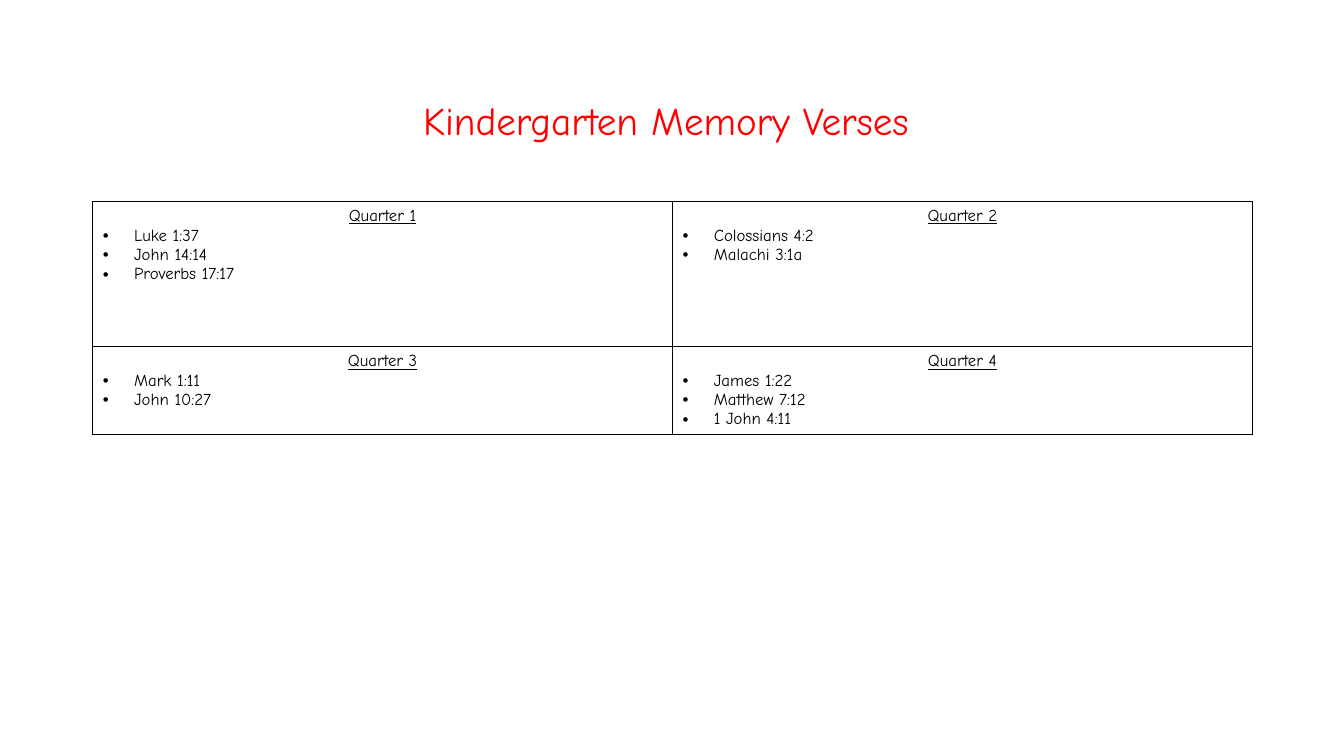
from lxml import etree
from pptx import Presentation
from pptx.dml.color import RGBColor
from pptx.enum.text import MSO_ANCHOR, PP_ALIGN
from pptx.oxml.ns import qn
from pptx.util import Inches, Pt

MIDDLE, CENTER, LEFT = MSO_ANCHOR.MIDDLE, PP_ALIGN.CENTER, PP_ALIGN.LEFT

# Content
TITLE = "Kindergarten Memory Verses "
QUARTERS = [
    [("Quarter 1", ["Luke 1:37", "John 14:14", "Proverbs 17:17"]),
     ("Quarter 2", ["Colossians 4:2", "Malachi 3:1a"])],
    [("Quarter 3", ["Mark 1:11", "John 10:27"]),
     ("Quarter 4", ["James 1:22", "Matthew 7:12", "1 John 4:11"])],
]

# Theme and grid, lengths in inches
THEME = {"font": "Comic Neue", "title": 28, "body": 12,
         "red": "FF0000", "ink": "000000", "line": 1}
WIDE, HIGH = 13.33, 7.5
SIDE, SPAN = 0.92, 11.5
ROWS = [1.44, 0.87]
INDENT = 0.31


def add_run(para, text, size, color, under=False):
    run = para.add_run()
    run.text = text
    font = run.font
    font.name, font.size = THEME["font"], Pt(THEME[size])
    font.color.rgb = RGBColor.from_string(THEME[color])
    font.underline = under


def add_bullet(para):
    props = para._p.get_or_add_pPr()
    props.set("marL", str(Inches(INDENT)))
    props.set("indent", str(-Inches(INDENT)))
    etree.SubElement(props, qn("a:buFont")).set("typeface", "Arial")
    etree.SubElement(props, qn("a:buChar")).set("char", "•")


def add_border(cell):
    props = cell._tc.get_or_add_tcPr()
    for side in ("lnL", "lnR", "lnT", "lnB"):
        line = etree.SubElement(props, qn("a:" + side))
        line.set("w", str(Pt(THEME["line"])))
        fill = etree.SubElement(line, qn("a:solidFill"))
        etree.SubElement(fill, qn("a:srgbClr")).set("val", THEME["ink"])


def fill_cell(cell, head, verses):
    add_border(cell)
    cell.fill.background()
    frame = cell.text_frame
    para = frame.paragraphs[0]
    para.alignment = CENTER
    add_run(para, head, "body", "ink", under=True)
    for verse in verses:
        para = frame.add_paragraph()
        para.alignment = LEFT
        add_bullet(para)
        add_run(para, verse, "body", "ink")


def main():
    deck = Presentation()
    deck.slide_width, deck.slide_height = Inches(WIDE), Inches(HIGH)
    slide = deck.slides.add_slide(deck.slide_layouts[5])

    # Title
    title = slide.shapes.title
    title.left, title.top = Inches(SIDE), Inches(0.53)
    title.width, title.height = Inches(SPAN), Inches(1.37)
    title.text_frame.vertical_anchor = MIDDLE
    para = title.text_frame.paragraphs[0]
    para.alignment, para.line_spacing = CENTER, 0.9
    add_run(para, TITLE, "title", "red")

    # Table of quarters
    cols = len(QUARTERS[0])
    table = slide.shapes.add_table(
        len(ROWS), cols, Inches(SIDE), Inches(2),
        Inches(SPAN), Inches(sum(ROWS))).table
    table.first_row = table.horz_banding = False
    for col in table.columns:
        col.width = Inches(SPAN / cols)
    for r, (height, row) in enumerate(zip(ROWS, QUARTERS)):
        table.rows[r].height = Inches(height)
        for c, (head, verses) in enumerate(row):
            fill_cell(table.cell(r, c), head, verses)

    deck.save("out.pptx")


if __name__ == "__main__":
    main()
